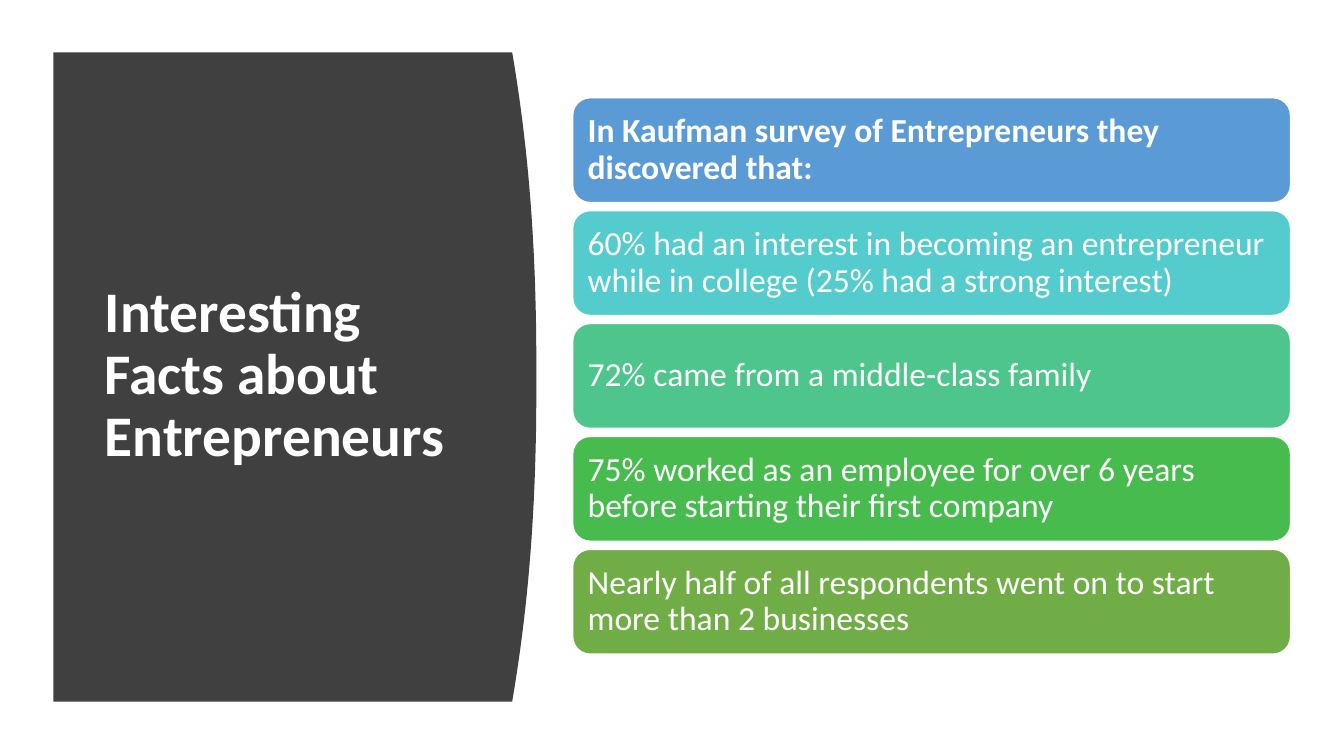
from dataclasses import dataclass

from pptx import Presentation
from pptx.dml.color import RGBColor
from pptx.enum.shapes import MSO_SHAPE
from pptx.enum.text import MSO_ANCHOR, PP_ALIGN
from pptx.util import Inches, Pt


@dataclass(frozen=True)
class Theme:
    font: str = "Calibri"
    title_size: int = 41
    fact_size: int = 24
    white: str = "FFFFFF"
    panel: str = "404040"
    facts: tuple = ("5B9BD5", "54CCCD", "4DC58D", "48BB4F", "70AD47")


FACTS = (
    "In Kaufman survey of Entrepreneurs they discovered that:",
    "60% had an interest in becoming an entrepreneur while in college "
    "(25% had a strong interest)",
    "72% came from a middle-class family",
    "75% worked as an employee for over 6 years before starting their first company",
    "Nearly half of all respondents went on to start more than 2 businesses",
)


class SlideBuilder:
    def __init__(self, slide, theme):
        self.slide = slide
        self.theme = theme

    def set_text(self, shape, text, size, bold, margins):
        """Fill a shape with one left-aligned, vertically centred paragraph."""
        frame = shape.text_frame
        frame_format = {"word_wrap": True, "vertical_anchor": MSO_ANCHOR.MIDDLE}
        for side, margin in zip(("left", "top", "right", "bottom"), margins):
            frame_format[f"margin_{side}"] = Inches(margin)
        para = frame.paragraphs[0]
        span = para.add_run()
        span.text = text
        formats = (
            (frame, frame_format),
            (para, {"alignment": PP_ALIGN.LEFT, "line_spacing": 0.9}),
            (span.font, {"name": self.theme.font, "size": Pt(size), "bold": bold}),
        )
        for target, values in formats:
            for name, value in values.items():
                setattr(target, name, value)
        span.font.color.rgb = RGBColor.from_string(self.theme.white)

    def paint(self, shape, color):
        shape.shadow.inherit = False
        shape.fill.solid()
        shape.fill.fore_color.rgb = RGBColor.from_string(color)

    def title(self, text, left, top, width, height):
        box = self.slide.shapes.title
        box.left, box.top = Inches(left), Inches(top)
        box.width, box.height = Inches(width), Inches(height)
        self.set_text(box, text, self.theme.title_size, True, (0.1, 0.05, 0.1, 0.05))

    def curved_panel(self, left, top, corner, height, bulge, steps=48):
        """Draw a panel whose right edge bows outward by the bulge."""
        edge = []
        for step in range(steps + 1):
            part = step / steps
            reach = 1 - abs(2 * part - 1) ** 2.3
            edge.append((corner + bulge * reach, top + height * part))
        outline = [*edge, (left, top + height)]
        builder = self.slide.shapes.build_freeform(
            Inches(left), Inches(top), scale=1.0
        )
        builder.add_line_segments(
            [(Inches(x), Inches(y)) for x, y in outline], close=True
        )
        panel = builder.convert_to_shape()
        self.paint(panel, self.theme.panel)
        panel.line.fill.background()
        # The panel lies behind the title
        self.slide.shapes.title._element.addprevious(panel._element)

    def fact(self, text, color, left, top, width, height, bold):
        card = self.slide.shapes.add_shape(
            MSO_SHAPE.ROUNDED_RECTANGLE,
            Inches(left), Inches(top), Inches(width), Inches(height),
        )
        self.paint(card, color)
        card.line.color.rgb = RGBColor.from_string(self.theme.white)
        card.line.width = Pt(1)
        self.set_text(card, text, self.theme.fact_size, bold, (0.1,) * 4)


def main():
    deck = Presentation()
    deck.slide_width, deck.slide_height = Inches(13.33), Inches(7.5)
    theme = Theme()
    page = SlideBuilder(deck.slides.add_slide(deck.slide_layouts[5]), theme)

    # Title on the dark panel
    page.curved_panel(left=0.53, top=0.52, corner=5.08, height=6.44, bulge=0.24)
    page.title("Interesting Facts about Entrepreneurs", 0.94, 1.11, 3.74, 5.24)

    # Stack of facts, the first one being the heading
    for row, (text, color) in enumerate(zip(FACTS, theme.facts)):
        page.fact(text, color, 5.68, 0.97 + 1.12 * row, 7.12, 1.04, bold=row == 0)

    deck.save("out.pptx")


if __name__ == "__main__":
    main()
